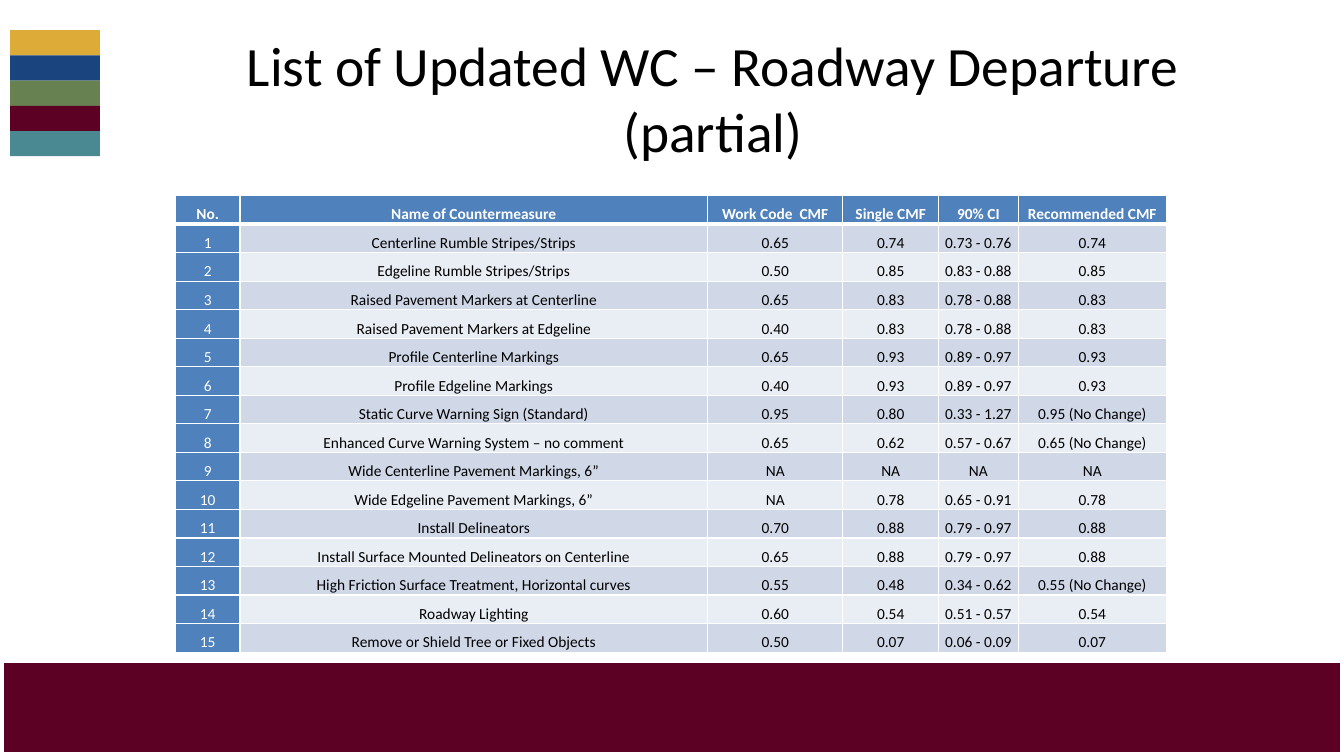
"""Build the slide listing updated work code CMFs for roadway departure."""
from dataclasses import dataclass

from lxml.etree import SubElement
from pptx import Presentation
from pptx.dml.color import RGBColor
from pptx.enum.shapes import MSO_SHAPE
from pptx.enum.text import MSO_ANCHOR, MSO_AUTO_SIZE, PP_ALIGN
from pptx.oxml.ns import qn
from pptx.util import Inches, Pt


@dataclass(frozen=True)
class Theme:
    font: str = "Calibri"
    title_size: float = 39.6
    table_size: float = 11
    ink: str = "000000"
    white: str = "FFFFFF"
    maroon: str = "5C0024"
    header: str = "4F81BD"
    bands: tuple = ("D0D8E8", "E9EDF4")
    stripes: tuple = ("DDAB37", "19447E", "678250", "5C0024", "4B8992")


HEADINGS = ("No.", "Name of Countermeasure", "Work Code  CMF", "Single CMF",
            "90% CI", "Recommended CMF")
COLUMN_WIDTHS = (0.64, 4.64, 1.34, 0.95, 0.79, 1.47)
COUNTERMEASURES = (
    ("Centerline Rumble Stripes/Strips", "0.65", "0.74", "0.73 - 0.76", "0.74"),
    ("Edgeline Rumble Stripes/Strips", "0.50", "0.85", "0.83 - 0.88", "0.85"),
    ("Raised Pavement Markers at Centerline", "0.65", "0.83", "0.78 - 0.88", "0.83"),
    ("Raised Pavement Markers at Edgeline", "0.40", "0.83", "0.78 - 0.88", "0.83"),
    ("Profile Centerline Markings", "0.65", "0.93", "0.89 - 0.97", "0.93"),
    ("Profile Edgeline Markings", "0.40", "0.93", "0.89 - 0.97", "0.93"),
    ("Static Curve Warning Sign (Standard)", "0.95", "0.80", "0.33 - 1.27",
     "0.95 (No Change)"),
    ("Enhanced Curve Warning System – no comment", "0.65", "0.62", "0.57 - 0.67",
     "0.65 (No Change)"),
    ("Wide Centerline Pavement Markings, 6”", "NA", "NA", "NA", "NA"),
    ("Wide Edgeline Pavement Markings, 6”", "NA", "0.78", "0.65 - 0.91", "0.78"),
    ("Install Delineators", "0.70", "0.88", "0.79 - 0.97", "0.88"),
    ("Install Surface Mounted Delineators on Centerline", "0.65", "0.88",
     "0.79 - 0.97", "0.88"),
    ("High Friction Surface Treatment, Horizontal curves", "0.55", "0.48",
     "0.34 - 0.62", "0.55 (No Change)"),
    ("Roadway Lighting", "0.60", "0.54", "0.51 - 0.57", "0.54"),
    ("Remove or Shield Tree or Fixed Objects", "0.50", "0.07", "0.06 - 0.09", "0.07"),
)


class SlideBuilder:
    """Hold the theme and the current slide, and add elements to it."""

    def __init__(self, slide, theme):
        self.slide = slide
        self.theme = theme

    def format_paragraph(self, paragraph, size, color, bold=False):
        paragraph.alignment = PP_ALIGN.CENTER
        font = paragraph.font
        font.name, font.size, font.bold = self.theme.font, Pt(size), bold
        font.color.rgb = RGBColor.from_string(color)

    def title(self, text, left, top, width, height):
        title = self.slide.shapes.title
        title.left, title.top = Inches(left), Inches(top)
        title.width, title.height = Inches(width), Inches(height)
        frame = title.text_frame
        frame.text = text
        frame.word_wrap = True
        frame.auto_size = MSO_AUTO_SIZE.NONE
        frame.vertical_anchor = MSO_ANCHOR.MIDDLE
        self.format_paragraph(frame.paragraphs[0], self.theme.title_size, self.theme.ink)

    def rectangle(self, left, top, width, height, fill=None, line=None, weight=0,
                  parent=None):
        box = (parent or self.slide).shapes.add_shape(
            MSO_SHAPE.RECTANGLE, Inches(left), Inches(top), Inches(width), Inches(height))
        box.shadow.inherit = False
        if fill:
            box.fill.solid()
            box.fill.fore_color.rgb = RGBColor.from_string(fill)
        else:
            box.fill.background()
        if line:
            box.line.color.rgb = RGBColor.from_string(line)
            box.line.width = Pt(weight)
        else:
            box.line.fill.background()

    def stripes(self, left, top, width, height):
        emblem = self.slide.shapes.add_group_shape()
        for index, color in enumerate(self.theme.stripes):
            self.rectangle(left, top + index * height, width, height, color, parent=emblem)

    def borders(self, cell, top, bottom):
        properties = cell._tc.get_or_add_tcPr()
        for side, weight in (("L", 1), ("R", 1), ("T", top), ("B", bottom)):
            line = SubElement(properties, qn(f"a:ln{side}"), w=str(Pt(weight)))
            solid = SubElement(line, qn("a:solidFill"))
            SubElement(solid, qn("a:srgbClr"), val=self.theme.white)

    def cell(self, cell, text, row, column):
        theme = self.theme
        is_header = row == 0
        is_blue = is_header or column == 0
        self.borders(cell, 3 if row == 1 else 1, 3 if is_header else 1)
        cell.fill.solid()
        cell.fill.fore_color.rgb = RGBColor.from_string(
            theme.header if is_blue else theme.bands[(row - 1) % 2])
        cell.margin_left = cell.margin_right = Inches(0.03 if is_header else 0.06)
        cell.margin_top = cell.margin_bottom = Inches(0)
        cell.vertical_anchor = MSO_ANCHOR.MIDDLE
        cell.text = text
        paragraph = cell.text_frame.paragraphs[0]
        paragraph.line_spacing = 1.5
        self.format_paragraph(paragraph, theme.table_size,
                              theme.white if is_blue else theme.ink, is_header)

    def table(self, rows, widths, left, top, row_height):
        table = self.slide.shapes.add_table(
            len(rows), len(widths), Inches(left), Inches(top),
            Inches(sum(widths)), Inches(row_height * len(rows))).table
        for column, width in zip(table.columns, widths):
            column.width = Inches(width)
        for row, values in enumerate(rows):
            table.rows[row].height = Inches(row_height)
            for column, value in enumerate(values):
                self.cell(table.cell(row, column), value, row, column)


def main():
    presentation = Presentation()
    presentation.slide_width, presentation.slide_height = Inches(13.33), Inches(7.5)
    theme = Theme()
    builder = SlideBuilder(
        presentation.slides.add_slide(presentation.slide_layouts[5]), theme)
    builder.rectangle(0, 6.58, 13.33, 0.9, theme.maroon)
    builder.stripes(0.1, 0.3, 0.89, 0.25)
    builder.rectangle(0, 0, 13.33, 7.5, line=theme.white, weight=6)
    builder.title("List of Updated WC – Roadway Departure (partial)", 2.25, 0.42, 9.64, 1.09)
    numbered = [(str(number), *values)
                for number, values in enumerate(COUNTERMEASURES, start=1)]
    builder.table([HEADINGS, *numbered], COLUMN_WIDTHS, 1.74, 1.94, 0.26)
    presentation.save("out.pptx")


if __name__ == "__main__":
    main()
